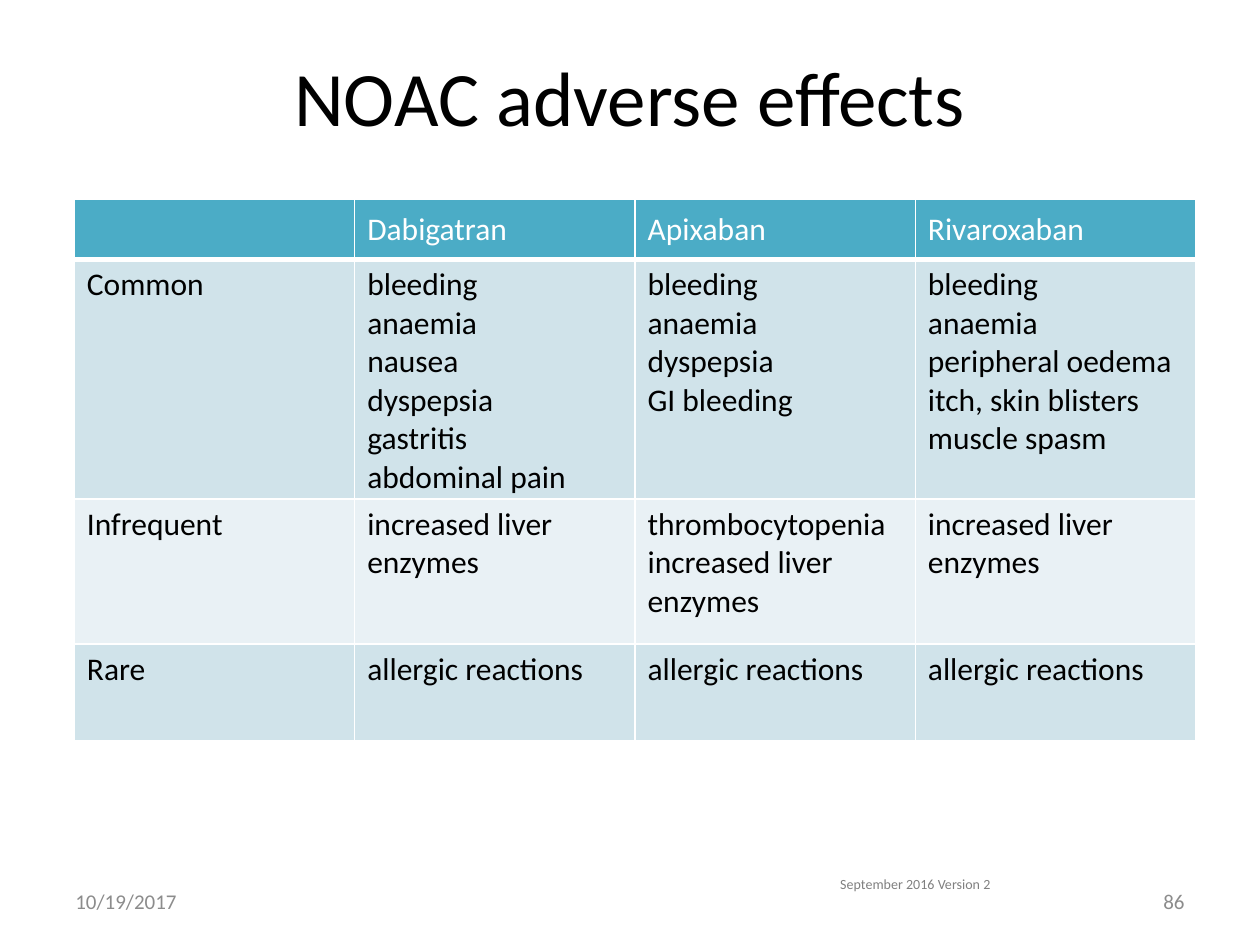
from lxml.etree import SubElement as Sub
from pptx import Presentation as Deck
from pptx.dml.color import RGBColor as Color
from pptx.enum.text import MSO_ANCHOR as Anchor, PP_ALIGN as Align
from pptx.oxml.ns import qn
from pptx.util import Inches as In, Pt

# Content
HEAD = ["", "Dabigatran", "Apixaban", "Rivaroxaban"]
LIVER, RASH = "increased liver enzymes", "allergic reactions"
ROWS = [
    (["Common"],
     ["bleeding", "anaemia", "nausea", "dyspepsia", "gastritis", "abdominal pain"],
     ["bleeding", "anaemia", "dyspepsia", "GI bleeding"],
     ["bleeding", "anaemia", "peripheral oedema itch, skin blisters", "muscle spasm"]),
    (["Infrequent"], [LIVER], ["thrombocytopenia", LIVER], [LIVER]),
    (["Rare"], [RASH], [RASH], [RASH]),
]

THEME = {
    "font": "Calibri",
    "title": (44, "000000"), "head": (18, "FFFFFF"), "body": (18, "000000"),
    "foot": (12, "8C8C8C"), "note": (8, "808080"),
    "top": "4BACC6", "bands": ("D0E3EA", "E9F1F5"), "rule": "FFFFFF",
}

# Layout in inches
WIDE, HIGH = 10, 7.5
EDGE = WIDE / 20
FOOT = (6.95, 2.33, 0.4)
GRID = (0.59, 1.58, 8.9)
TALL = (0.48, 1.81, 1.15, 0.77)
BOXES = [
    ("NOAC adverse effects", "title", (EDGE, 0.29, WIDE - 2 * EDGE, 0.94),
     Align.CENTER, Anchor.MIDDLE),
    ("86", "foot", (WIDE - EDGE - FOOT[1], *FOOT), Align.RIGHT, Anchor.MIDDLE),
    ("September 2016 Version 2", "note", (6.57, 6.9, 1.81, 0.24),
     Align.LEFT, Anchor.TOP),
    ("10/19/2017", "foot", (EDGE, *FOOT), Align.LEFT, Anchor.MIDDLE),
]


def write(frame, lines, style, align=Align.LEFT):
    size, color = THEME[style]
    looks = {"name": THEME["font"], "size": Pt(size), "bold": False}
    frame.text = "\n".join(lines)
    for para in frame.paragraphs:
        para.alignment = align
        for key, value in looks.items():
            setattr(para.font, key, value)
        para.font.color.rgb = Color.from_string(color)
        for run in para.runs:
            for key, value in looks.items():
                setattr(run.font, key, value)
            run.font.color.rgb = Color.from_string(color)


def paint(cell, color, base):
    # Borders must come before the fill in the cell's XML
    props = cell._tc.get_or_add_tcPr()
    for side, width in (("L", 1), ("R", 1), ("T", 1), ("B", base)):
        line = Sub(props, qn(f"a:ln{side}"), w=str(Pt(width)))
        Sub(Sub(line, qn("a:solidFill")), qn("a:srgbClr"), val=THEME["rule"])
    cell.fill.solid()
    cell.fill.fore_color.rgb = Color.from_string(color)


def main():
    deck = Deck()
    deck.slide_width, deck.slide_height = In(WIDE), In(HIGH)
    slide = deck.slides.add_slide(deck.slide_layouts[6])

    # Title and footers
    for text, style, place, align, anchor in BOXES:
        frame = slide.shapes.add_textbox(*map(In, place)).text_frame
        frame.word_wrap, frame.vertical_anchor = True, anchor
        write(frame, [text], style, align)

    # Table of effects
    cells = [[[name] for name in HEAD], *ROWS]
    place = (*GRID, sum(TALL))
    table = slide.shapes.add_table(len(cells), len(HEAD), *map(In, place)).table
    for col in table.columns:
        col.width = In(GRID[2] / len(HEAD))
    for r, row in enumerate(cells):
        table.rows[r].height = In(TALL[r])
        top = r == 0
        color = THEME["top"] if top else THEME["bands"][(r - 1) % 2]
        for c, lines in enumerate(row):
            cell = table.cell(r, c)
            cell.vertical_anchor = Anchor.MIDDLE if top else Anchor.TOP
            write(cell.text_frame, lines, "head" if top else "body")
            paint(cell, color, 3 if top else 1)

    deck.save("out.pptx")


if __name__ == "__main__":
    main()
